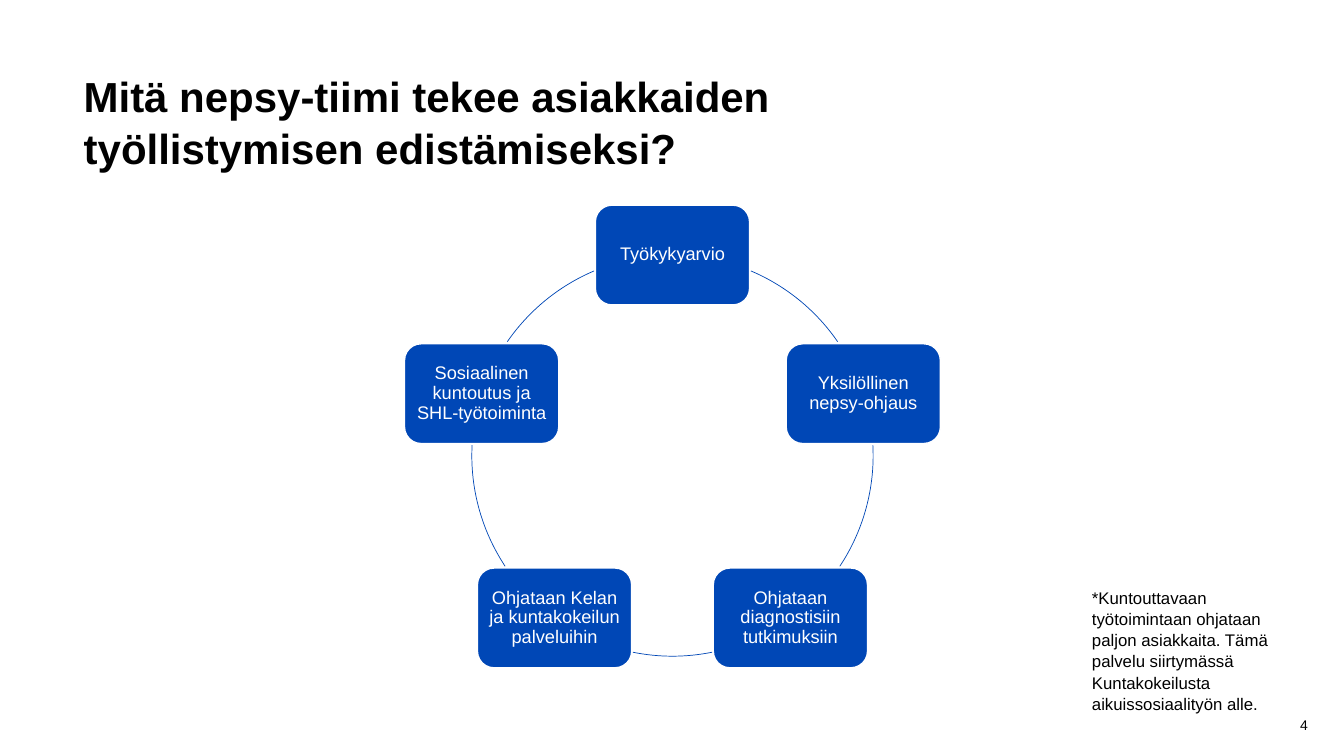
from math import cos, radians, sin

from pptx import Presentation
from pptx.dml.color import RGBColor
from pptx.enum.shapes import MSO_SHAPE
from pptx.enum.text import MSO_ANCHOR, PP_ALIGN
from pptx.util import Emu, Pt

TITLE = "Mitä nepsy-tiimi tekee asiakkaiden työllistymisen edistämiseksi?"
# Clockwise from the top
STEPS = [
    "Työkykyarvio",
    "Yksilöllinen nepsy-ohjaus",
    "Ohjataan diagnostisiin tutkimuksiin",
    "Ohjataan Kelan ja kuntakokeilun palveluihin",
    "Sosiaalinen kuntoutus ja SHL-työtoiminta",
]
# Visible parts of the ring in degrees, clockwise from the right
ARCS = [(293, 325.4), (357, 33.5), (78.6, 101.4), (146.5, 183), (214.6, 247)]
NOTE = ("*Kuntouttavaan työtoimintaan ohjataan paljon asiakkaita. Tämä palvelu "
        "siirtymässä Kuntakokeilusta aikuissosiaalityön alle.")
PAGE_NUMBER = "4"

COLORS = {"blue": "0047B6", "white": "FFFFFF", "black": "000000"}
FONT = "Arial"
CENTER_X, CENTER_Y, RADIUS = 667, 452, 199
BOX_WIDTH, BOX_HEIGHT = 153, 99


def px(value):
    """100 px to the inch."""
    return Emu(round(value * 9144))


def color(name):
    return RGBColor.from_string(COLORS[name])


def write(shape, text, size, ink, align=PP_ALIGN.LEFT, anchor=MSO_ANCHOR.TOP,
          inset=0, spacing=1.0, bold=False):
    frame = shape.text_frame
    frame.word_wrap = True
    frame.vertical_anchor = anchor
    frame.margin_left = frame.margin_right = px(inset)
    frame.margin_top = frame.margin_bottom = px(inset)
    para = frame.paragraphs[0]
    para.alignment = align
    para.line_spacing = spacing
    span = para.add_run()
    span.text = text
    span.font.name = FONT
    span.font.size = Pt(size)
    span.font.bold = bold
    span.font.color.rgb = color(ink)


deck = Presentation()
deck.slide_width, deck.slide_height = px(1333), px(750)
page = deck.slides.add_slide(deck.slide_layouts[5])
shapes = page.shapes

# Title
title = shapes.title
title.left, title.top, title.width, title.height = map(px, (83, 67, 922, 115))
write(title, TITLE, 30, "black", spacing=1.05, bold=True)

# Ring
for start, end in ARCS:
    arc = shapes.add_shape(MSO_SHAPE.ARC, px(CENTER_X - RADIUS), px(CENTER_Y - RADIUS),
                           px(2 * RADIUS), px(2 * RADIUS))
    # Arc angles are stored in 60000ths of a degree, adjustments in 100000ths
    arc.adjustments[0] = start * 0.6
    arc.adjustments[1] = end * 0.6
    arc.shadow.inherit = False
    arc.fill.background()
    arc.line.color.rgb = color("blue")
    arc.line.width = Pt(0.5)

# Steps evenly spaced around the ring
for index, step in enumerate(STEPS):
    angle = radians(index * 360 / len(STEPS) - 90)
    left = CENTER_X + RADIUS * cos(angle) - BOX_WIDTH / 2
    top = CENTER_Y + RADIUS * sin(angle) - BOX_HEIGHT / 2
    box = shapes.add_shape(MSO_SHAPE.ROUNDED_RECTANGLE, px(left), px(top),
                           px(BOX_WIDTH), px(BOX_HEIGHT))
    box.shadow.inherit = False
    box.fill.solid()
    box.fill.fore_color.rgb = color("blue")
    box.line.color.rgb = color("white")
    box.line.width = Pt(1)
    write(box, step, 13, "white", PP_ALIGN.CENTER, MSO_ANCHOR.MIDDLE,
          inset=4, spacing=0.9)

# Page number and side note
number = shapes.add_textbox(px(1202), px(703), px(95), px(32))
write(number, PAGE_NUMBER, 10, "black", PP_ALIGN.RIGHT, MSO_ANCHOR.MIDDLE)
note = shapes.add_textbox(px(1083), px(582), px(189), px(121))
write(note, NOTE, 12, "black", spacing=1.05)

deck.save("out.pptx")
